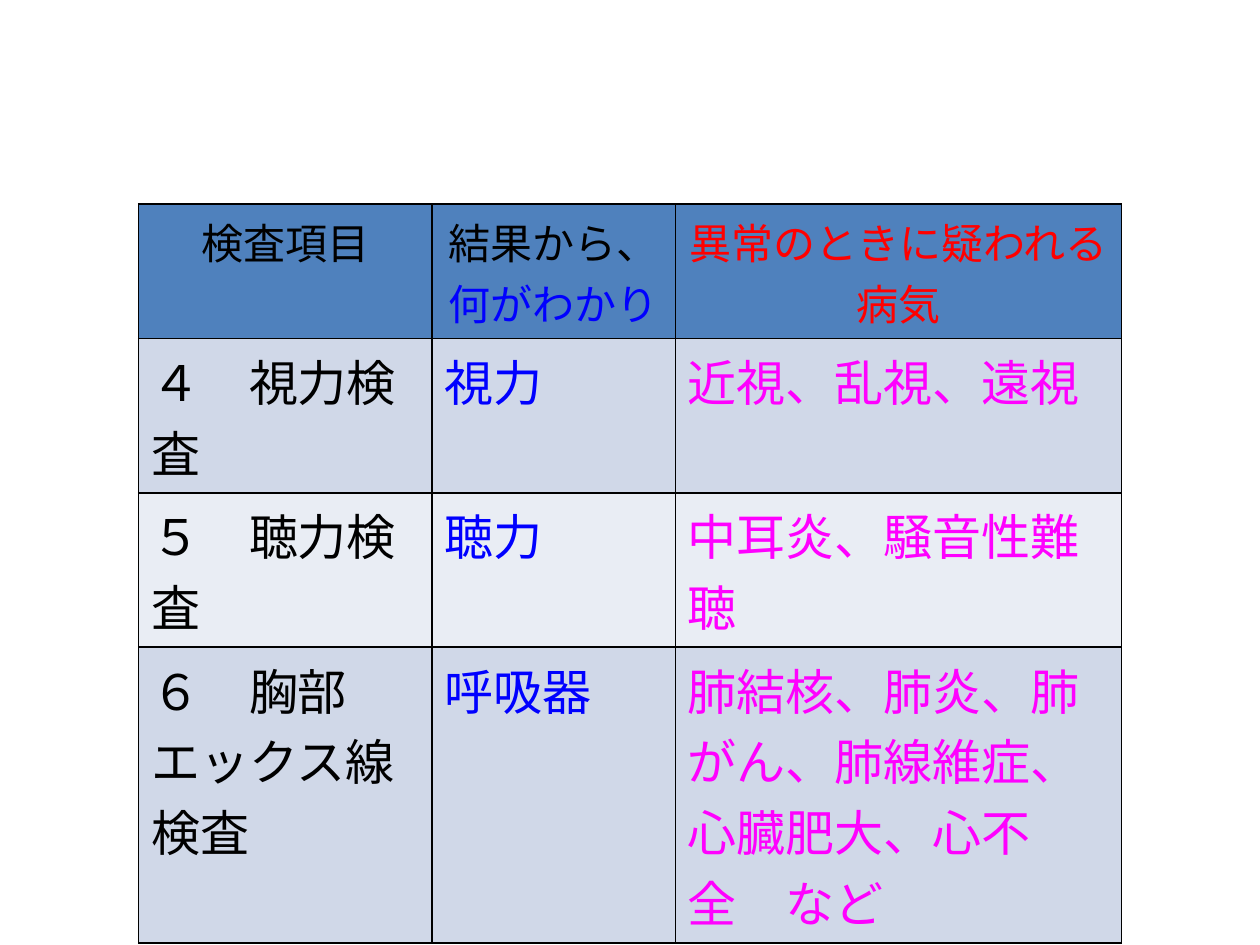
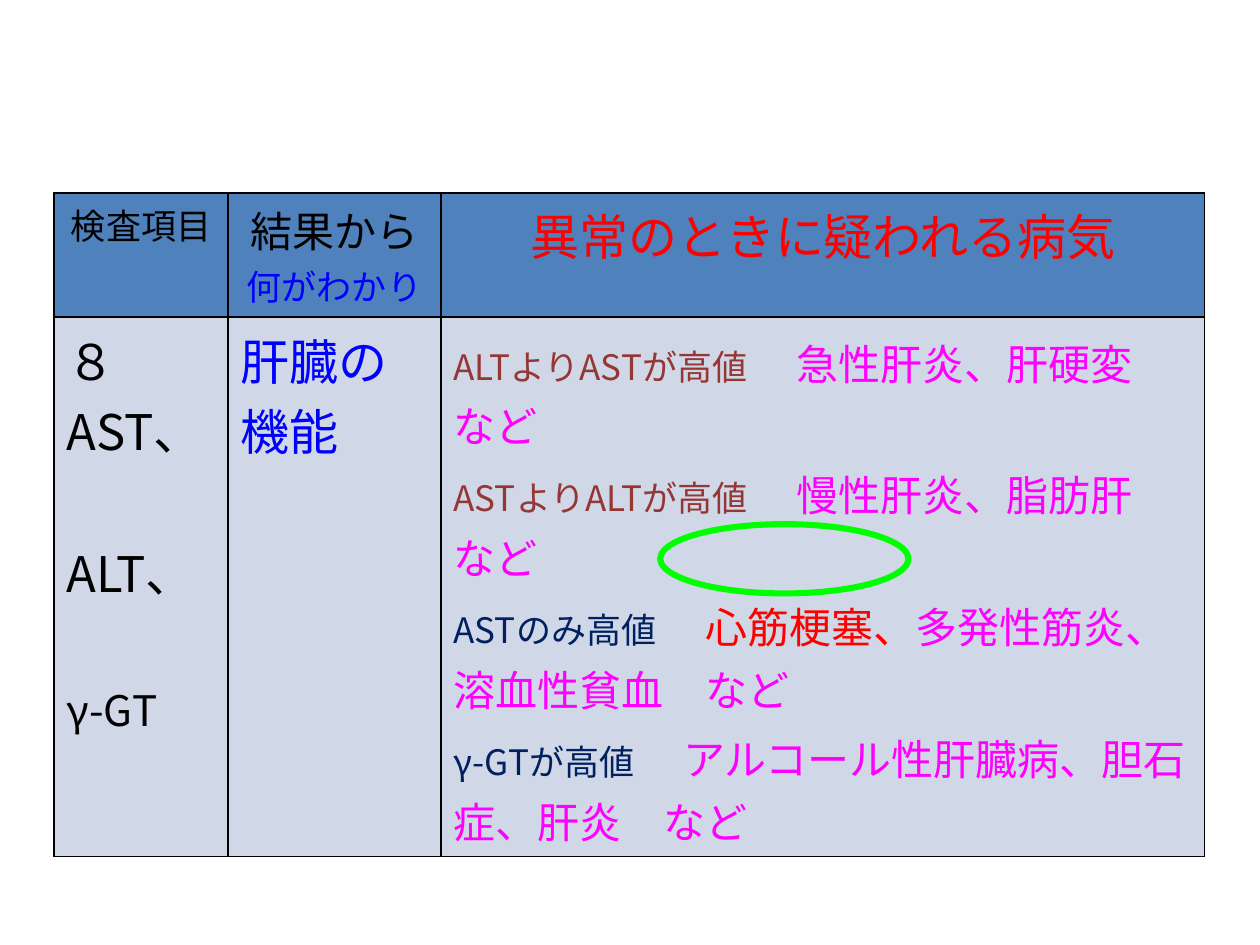
import pptx
import pptx.dml.color
import pptx.enum.lang
import pptx.enum.shapes
import pptx.enum.text
import pptx.oxml
import pptx.oxml.ns
import pptx.util
from pptx.util import Inches, Pt

FACE = "Noto Sans CJK JP"
BLACK, BLUE, RED, PINK = "000000", "0000FF", "FF0000", "FF00FF"
BROWN, NAVY, GREEN = "953735", "002060", "00FF00"
HEAD, BANDS = "4F81BD", ("D0D8E8", "E9EDF4")
JAPAN = pptx.enum.lang.MSO_LANGUAGE_ID.JAPANESE
CENTER = pptx.enum.text.PP_ALIGN.CENTER


def tint(code):
    return pptx.dml.color.RGBColor.from_string(code)


def assign(item, values):
    for name, value in values.items():
        setattr(item, name, value)


def write(para, runs):
    """Add (text, size, colour) runs to a paragraph."""
    for text, size, color in runs:
        run = para.add_run()
        run.text = text
        run.font.color.rgb = tint(color)
        assign(run.font, {"size": Pt(size), "name": FACE, "language_id": JAPAN})
        east = pptx.oxml.parse_xml(
            f'<a:ea {pptx.oxml.ns.nsdecls("a")} typeface="{FACE}"/>')
        run.font.latin = None
        run.font._element.append(east)


def frame(cell):
    """Draw a thin black line on each side of a cell."""
    props = cell._tc.get_or_add_tcPr()
    for side in "LRTB":
        props.append(pptx.oxml.parse_xml(
            f'<a:ln{side} {pptx.oxml.ns.nsdecls("a")} w="12700"><a:solidFill>'
            f'<a:srgbClr val="{BLACK}"/></a:solidFill></a:ln{side}>'))


def fill(cell, paras, color, align=None, gap=0):
    frame(cell)
    cell.fill.solid()
    cell.fill.fore_color.rgb = tint(color)
    for i, runs in enumerate(paras):
        para = cell.text_frame.add_paragraph() if i else cell.text_frame.paragraphs[0]
        assign(para, {"alignment": align, "space_before": Pt(gap if i else 0)})
        write(para, runs)


def grid(slide, box, cols, highs, rows, gaps=()):
    """Place a table; gaps gives paragraph spacing per body column."""
    shape = slide.shapes.add_table(len(rows), len(cols), *map(Inches, box))
    table = shape.table
    assign(table, {"first_row": False, "horz_banding": False})
    for col, wide in zip(table.columns, cols):
        col.width = Inches(wide)
    for r, (row, high) in enumerate(zip(rows, highs)):
        table.rows[r].height = Inches(high)
        for c, paras in enumerate(row):
            if r == 0:
                fill(table.cell(r, c), paras, HEAD, CENTER)
            else:
                gap = gaps[c] if gaps else 0
                fill(table.cell(r, c), paras, BANDS[(r - 1) % 2], gap=gap)


def header(second, sizes):
    """Heading row: sizes for item, two result lines and illness."""
    item, top, low, ill = sizes
    return [
        [[("検査項目", item, BLACK)]],
        [[(second, top, BLACK)], [("何がわかり", low, BLUE)]],
        [[("異常のときに疑われる病気", ill, RED)]],
    ]


def exam(lines, result, ills):
    return [
        [[(line, 28, BLACK)] for line in lines],
        [[(result, 28, BLUE)]],
        [[(ills, 28, PINK)]],
    ]


def ring(slide, box):
    oval = slide.shapes.add_shape(
        pptx.enum.shapes.MSO_SHAPE.OVAL, *map(Inches, box))
    oval.shadow.inherit = False
    oval.fill.background()
    oval.line.color.rgb = tint(GREEN)
    oval.line.width = Pt(3.5)


def senses(slide, left, top):
    rows = [
        header("結果から、", (24, 24, 24, 24)),
        exam(["４　視力検査"], "視力", "近視、乱視、遠視"),
        exam(["５　聴力検査"], "聴力", "中耳炎、騒音性難聴"),
        exam(["６　胸部", "エックス線", "検査"], "呼吸器",
             "肺結核、肺炎、肺がん、肺線維症、心臓肥大、心不全　など"),
    ]
    grid(slide, (left, top, 7.8, 5.08), (2.33, 1.93, 3.54),
         (0.94, 0.64, 0.62, 2.06), rows)


def liver(slide, left, top):
    signs = [
        ("ALTよりASTが高値", BROWN, [("急性肝炎、肝硬変　など", 24, PINK)]),
        ("ASTよりALTが高値", BROWN, [("慢性肝炎、脂肪肝　など", 24, PINK)]),
        ("ASTのみ高値", NAVY, [("心筋梗塞、", 24, RED),
                          ("多発性筋炎、溶血性貧血　など", 24, PINK)]),
        ("γ-GTが高値", NAVY, [("アルコール性肝臓病、胆石症、肝炎　など", 24, PINK)]),
    ]
    tests = [("８　AST、", 28), ("ALT、", 28), ("γ-GT", 24)]
    body = [
        [[(text, size, BLACK)] for text, size in tests],
        [[("肝臓の機能", 28, BLUE)]],
        [[(sign, 20, color), ("　", 28, color), *ills]
         for sign, color, ills in signs],
    ]
    grid(slide, (left, top, 9.13, 4.43), (1.38, 1.69, 6.06), (0.87, 3.43),
         [header("結果から", (20, 24, 20, 28)), body], gaps=(40.5, 0, 0))
    ring(slide, (left + 4.81, top + 2.63, 1.97, 0.55))


def main():
    deck = pptx.Presentation()
    assign(deck, {"slide_width": Inches(10), "slide_height": Inches(7.5)})
    for build, left, top in ((senses, 1.1, 1.62), (liver, 0.43, 1.53)):
        build(deck.slides.add_slide(deck.slide_layouts[6]), left, top)
    deck.save("out.pptx")


if __name__ == "__main__":
    main()
